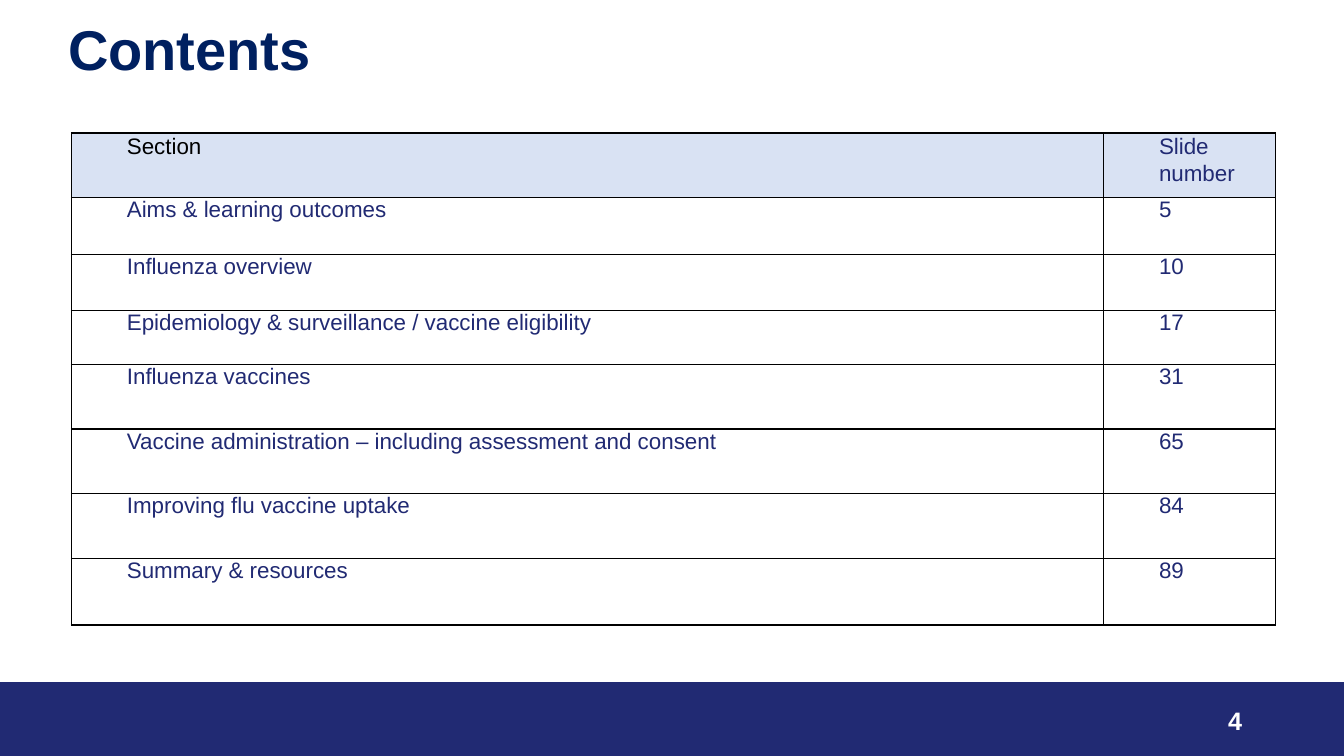
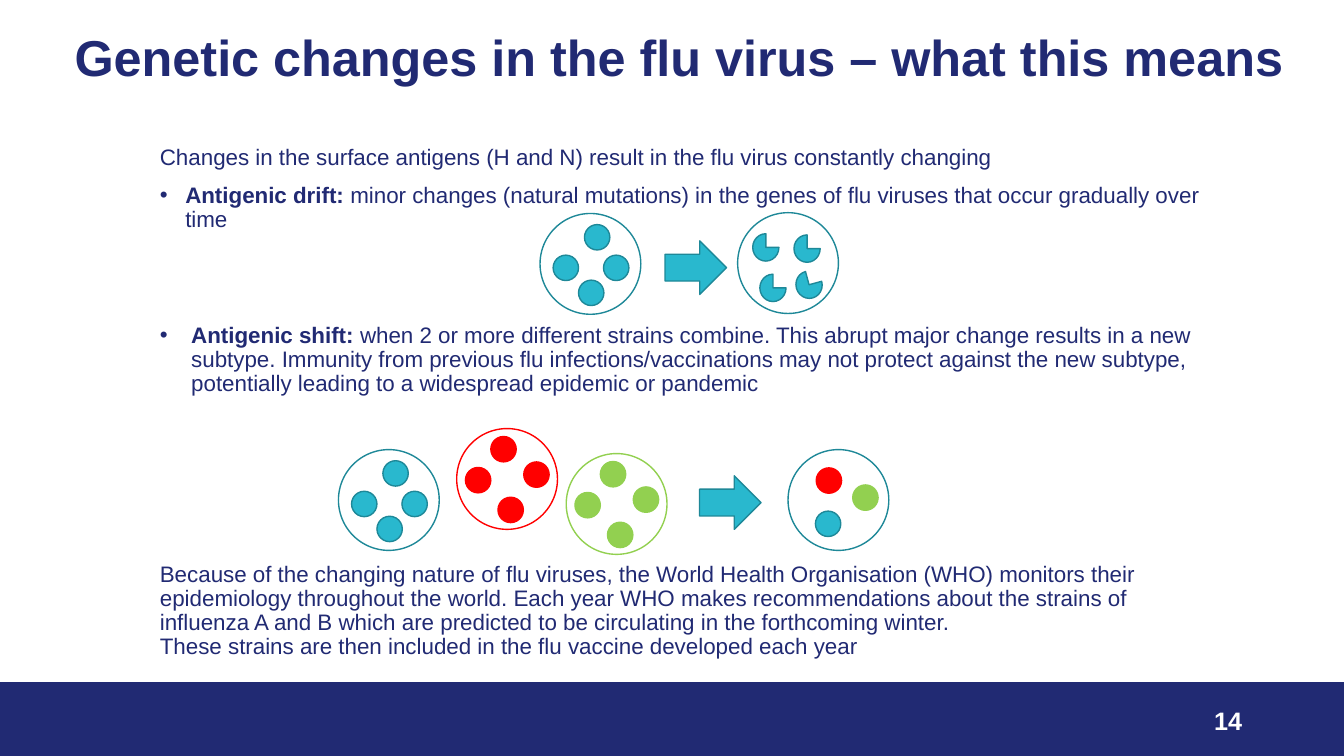
from lxml import etree
from pptx import Presentation
from pptx.dml.color import RGBColor
from pptx.enum.shapes import MSO_SHAPE as SHAPE
from pptx.enum.text import MSO_ANCHOR as ANCHOR, PP_ALIGN as ALIGN
from pptx.oxml import parse_xml
from pptx.oxml.ns import nsdecls, qn
from pptx.util import Cm, Pt

FONT = "Arial"
NAVY = RGBColor(0x21, 0x2A, 0x73)
DARK_BLUE = RGBColor(0x00, 0x20, 0x60)
PALE_BLUE = RGBColor(0xD9, 0xE2, 0xF3)
BLACK = RGBColor(0, 0, 0)
WHITE = RGBColor(0xFF, 0xFF, 0xFF)
TEAL = RGBColor(0x29, 0xB8, 0xCE)
DARK_TEAL = RGBColor(0x1E, 0x88, 0x98)
RED = RGBColor(0xFF, 0, 0)
GREEN = RGBColor(0x92, 0xD0, 0x50)

OUTLINES = {TEAL: DARK_TEAL, RED: RED, GREEN: GREEN, NAVY: NAVY}
WIDTH, HEIGHT = 33.87, 19.05
BAND_TOP = 17.2
VIRUS_SIZE, ANTIGEN_SIZE = 2.54, 0.64

CONTENTS = [
    ("Section", "Slide number"),
    ("Aims & learning outcomes", "5"),
    ("Influenza overview", "10"),
    ("Epidemiology & surveillance / vaccine eligibility", "17"),
    ("Influenza vaccines", "31"),
    ("Vaccine administration – including assessment and consent", "65"),
    ("Improving flu vaccine uptake", "84"),
    ("Summary & resources", "89"),
]
COLUMN_WIDTHS = [26.01, 4.34]
ROW_HEIGHTS = [1.63, 1.44, 1.4, 1.36, 1.63, 1.63, 1.63, 1.68]

INTRO = "Changes in the surface antigens (H and N) result in the flu virus constantly changing"
DRIFT = ("minor changes (natural mutations) in the genes of flu viruses "
         "that occur gradually over time")
SHIFT = ("when 2 or more different strains combine. This abrupt major change results in a "
         "new subtype. Immunity from previous flu infections/vaccinations may not protect "
         "against the new subtype, potentially leading to a widespread epidemic or pandemic")
MONITORING = ("Because of the changing nature of flu viruses, the World Health Organisation (WHO) "
              "monitors their epidemiology throughout the world. Each year WHO makes "
              "recommendations about the strains of influenza A and B which are predicted to be "
              "circulating in the forthcoming winter. \n"
              "These strains are then included in the flu vaccine developed each year")

TEAL_ANTIGENS = [(0.33, 1.05), (0.97, 1.68), (1.6, 1.05), (1.12, 0.28)]
STRAIN_ANTIGENS = [(0.22, 0.98), (1.04, 1.73), (1.69, 0.84), (0.86, 0.2)]
MUTATED_ANTIGENS = [(0.38, 0.53, 0), (0.56, 1.55, 0), (1.42, 0.56, 0), (1.47, 1.47, 344.8)]
MIXED_ANTIGENS = [(0.71, 0.46, RED), (0.69, 1.55, TEAL), (1.63, 0.89, GREEN)]


def style_runs(p, size, color, bold=False):
    for r in p.runs:
        r.font.name = FONT
        r.font.size = Pt(size)
        r.font.bold = bold
        r.font.color.rgb = color


def add_text(s, x, y, w, h):
    tf = s.shapes.add_textbox(Cm(x), Cm(y), Cm(w), Cm(h)).text_frame
    tf.word_wrap = True
    return tf


def add_figure(shapes, kind, x, y, w, h, color, filled=True):
    sp = shapes.add_shape(kind, Cm(x), Cm(y), Cm(w), Cm(h))
    sp.shadow.inherit = False
    if filled:
        sp.fill.solid()
        sp.fill.fore_color.rgb = color
    else:
        sp.fill.background()
    sp.line.color.rgb = OUTLINES[color]
    sp.line.width = Pt(1)
    return sp


def add_base(prs, number):
    s = prs.slides.add_slide(prs.slide_layouts[6])
    add_figure(s.shapes, SHAPE.RECTANGLE, 0, BAND_TOP, WIDTH, HEIGHT - BAND_TOP, NAVY)
    tf = add_text(s, 23.93, 17.65, 7.62, 1.02)
    tf.vertical_anchor = ANCHOR.MIDDLE
    p = tf.paragraphs[0]
    p.text = str(number)
    p.alignment = ALIGN.RIGHT
    style_runs(p, 18, WHITE, True)
    return s


def add_title(s, text, x, y, w, size, color):
    p = add_text(s, x, y, w, 1.6).paragraphs[0]
    p.text = text
    p.line_spacing = 0.9
    style_runs(p, size, color, True)


def set_borders(cell):
    tc_pr = cell._tc.get_or_add_tcPr()
    for side in ("lnL", "lnR", "lnT", "lnB"):
        ln = etree.SubElement(tc_pr, qn(f"a:{side}"), w=str(Pt(1)))
        fill = etree.SubElement(ln, qn("a:solidFill"))
        etree.SubElement(fill, qn("a:srgbClr"), val=str(BLACK))


def fill_cell(cell, text, color, header):
    cell.margin_left, cell.margin_right = Cm(1.4), Cm(0.13)
    cell.margin_top = cell.margin_bottom = 0
    set_borders(cell)
    if header:
        cell.fill.solid()
        cell.fill.fore_color.rgb = PALE_BLUE
    else:
        cell.fill.background()
    p = cell.text_frame.paragraphs[0]
    p.text = text
    p.line_spacing = 1.07 if header else 1.0
    style_runs(p, 16, color)


def add_contents_table(s):
    table = s.shapes.add_table(len(CONTENTS), len(COLUMN_WIDTHS), Cm(1.8), Cm(3.35),
                               Cm(sum(COLUMN_WIDTHS)), Cm(sum(ROW_HEIGHTS))).table
    table.horz_banding = False
    for col, width in zip(table.columns, COLUMN_WIDTHS):
        col.width = Cm(width)
    for i, (row, height, texts) in enumerate(zip(table.rows, ROW_HEIGHTS, CONTENTS)):
        row.height = Cm(height)
        for j, (cell, text) in enumerate(zip(row.cells, texts)):
            fill_cell(cell, text, BLACK if i == j == 0 else NAVY, i == 0)


def format_body(p, space):
    p.line_spacing = 0.9
    p.space_before = Pt(space)
    style_runs(p, 16, NAVY)


def add_bullet(tf, lead, text, indent, space):
    p = tf.add_paragraph()
    p.text = lead
    p.add_run().text = text
    format_body(p, space)
    p.runs[0].font.bold = True
    p_pr = p._p.get_or_add_pPr()
    p_pr.set("marL", str(Cm(indent)))
    p_pr.set("indent", str(-Cm(indent)))
    p_pr.append(parse_xml(f'<a:buFont {nsdecls("a")} typeface="{FONT}"/>'))
    p_pr.append(parse_xml(f'<a:buChar {nsdecls("a")} char="•"/>'))


def add_body(s):
    tf = add_text(s, 3.78, 3.56, 27, 13.5)
    tf.paragraphs[0].text = INTRO
    format_body(tf.paragraphs[0], 10)
    add_bullet(tf, "Antigenic drift: ", DRIFT, 0.64, 10)
    add_bullet(tf, "Antigenic shift: ", SHIFT, 0.79, 65)
    p = tf.add_paragraph()
    p.text = MONITORING
    format_body(p, 119)


def add_envelope(s, x, y, color):
    shapes = s.shapes.add_group_shape().shapes
    add_figure(shapes, SHAPE.OVAL, x, y, VIRUS_SIZE, VIRUS_SIZE, color, filled=False)
    return shapes


def add_virus(s, x, y, color, antigens):
    shapes = add_envelope(s, x, y, color)
    for dx, dy, antigen_color in antigens:
        add_figure(shapes, SHAPE.FLOWCHART_CONNECTOR, x + dx, y + dy,
                   ANTIGEN_SIZE, ANTIGEN_SIZE, antigen_color)


def add_strain(s, x, y, color, places):
    add_virus(s, x, y, color, [(dx, dy, color) for dx, dy in places])


def add_mutated_virus(s, x, y):
    shapes = add_envelope(s, x, y, TEAL)
    for dx, dy, angle in MUTATED_ANTIGENS:
        add_figure(shapes, SHAPE.PIE, x + dx, y + dy, 0.66, 0.69, TEAL).rotation = angle


def add_arrow(s, x, y):
    add_figure(s.shapes, SHAPE.RIGHT_ARROW, x, y, 1.55, 1.35, TEAL)


def build_contents(prs):
    s = add_base(prs, 4)
    add_title(s, "Contents", 1.47, 0.43, 29.7, 40, DARK_BLUE)
    add_contents_table(s)


def build_genetic_changes(prs):
    s = add_base(prs, 14)
    add_title(s, "Genetic changes in the flu virus – what this means", 1.63, 0.71, 32, 36, NAVY)
    add_body(s)
    add_strain(s, 13.61, 5.38, TEAL, TEAL_ANTIGENS)
    add_arrow(s, 16.76, 6.07)
    add_mutated_virus(s, 18.59, 5.36)
    add_strain(s, 8.53, 11.33, TEAL, TEAL_ANTIGENS)
    add_strain(s, 11.51, 10.8, RED, STRAIN_ANTIGENS)
    add_strain(s, 14.27, 11.43, GREEN, STRAIN_ANTIGENS)
    add_arrow(s, 17.63, 11.99)
    add_virus(s, 19.86, 11.33, TEAL, MIXED_ANTIGENS)


def main():
    prs = Presentation()
    prs.slide_width, prs.slide_height = Cm(WIDTH), Cm(HEIGHT)
    build_contents(prs)
    build_genetic_changes(prs)
    prs.save("out.pptx")


if __name__ == "__main__":
    main()
